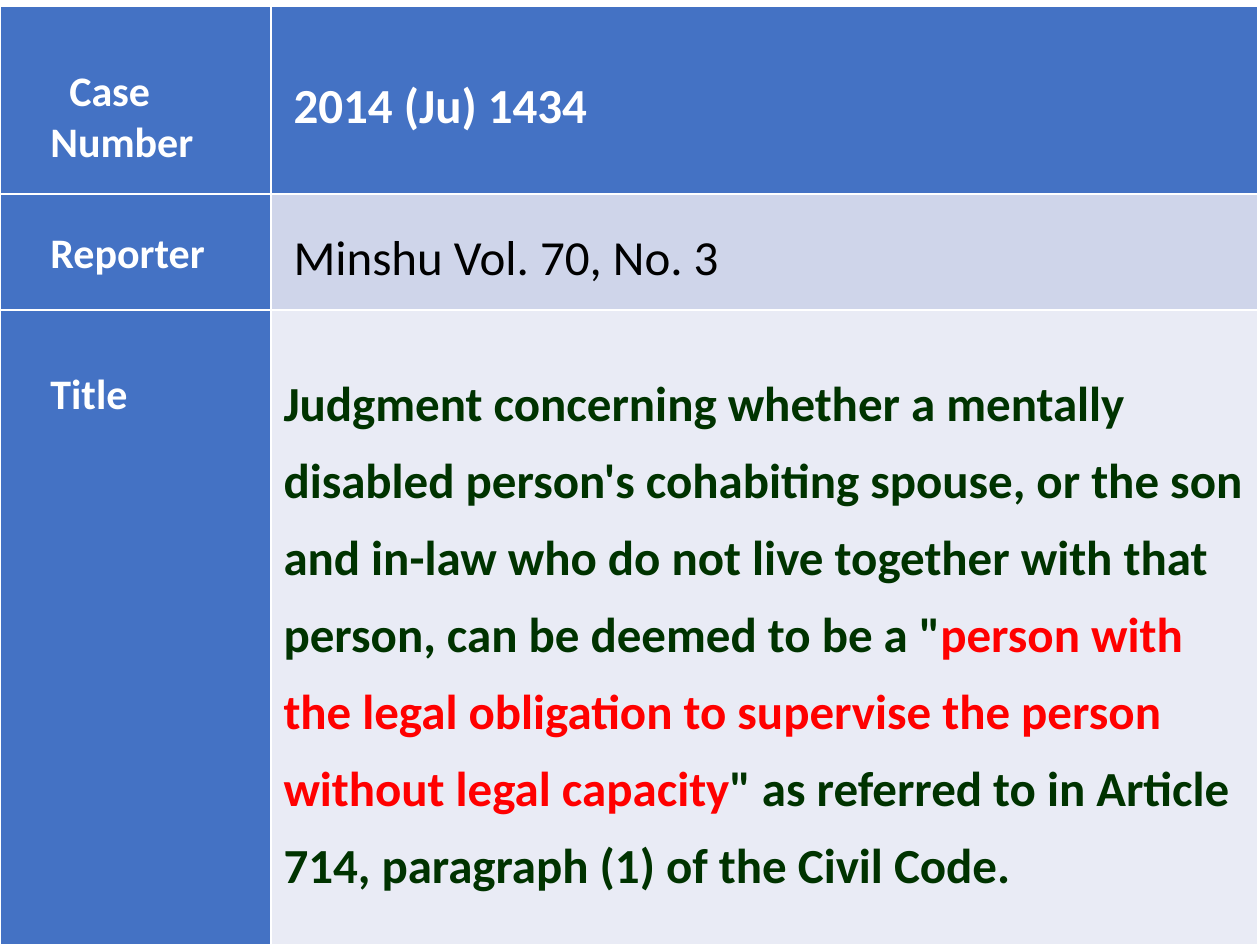
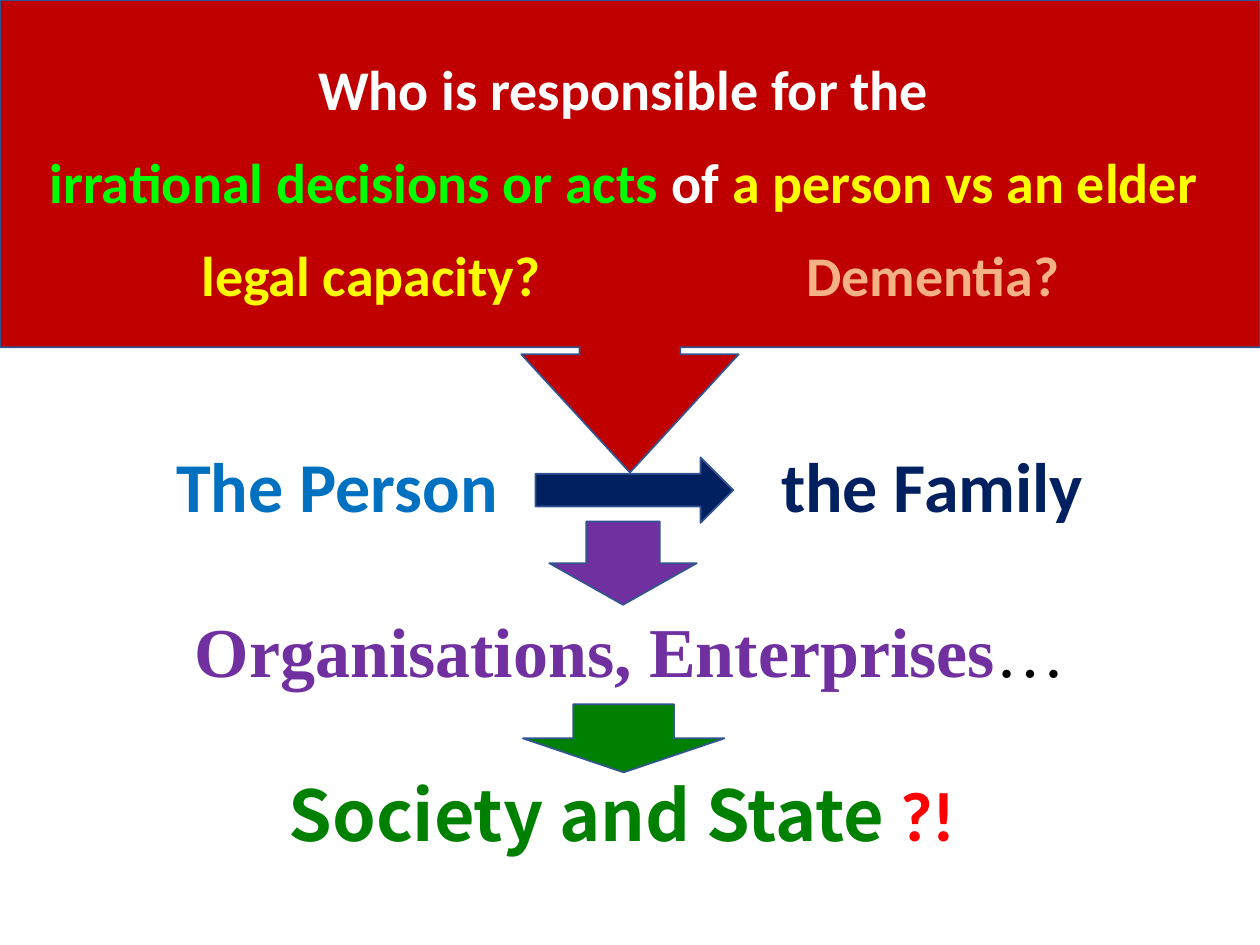
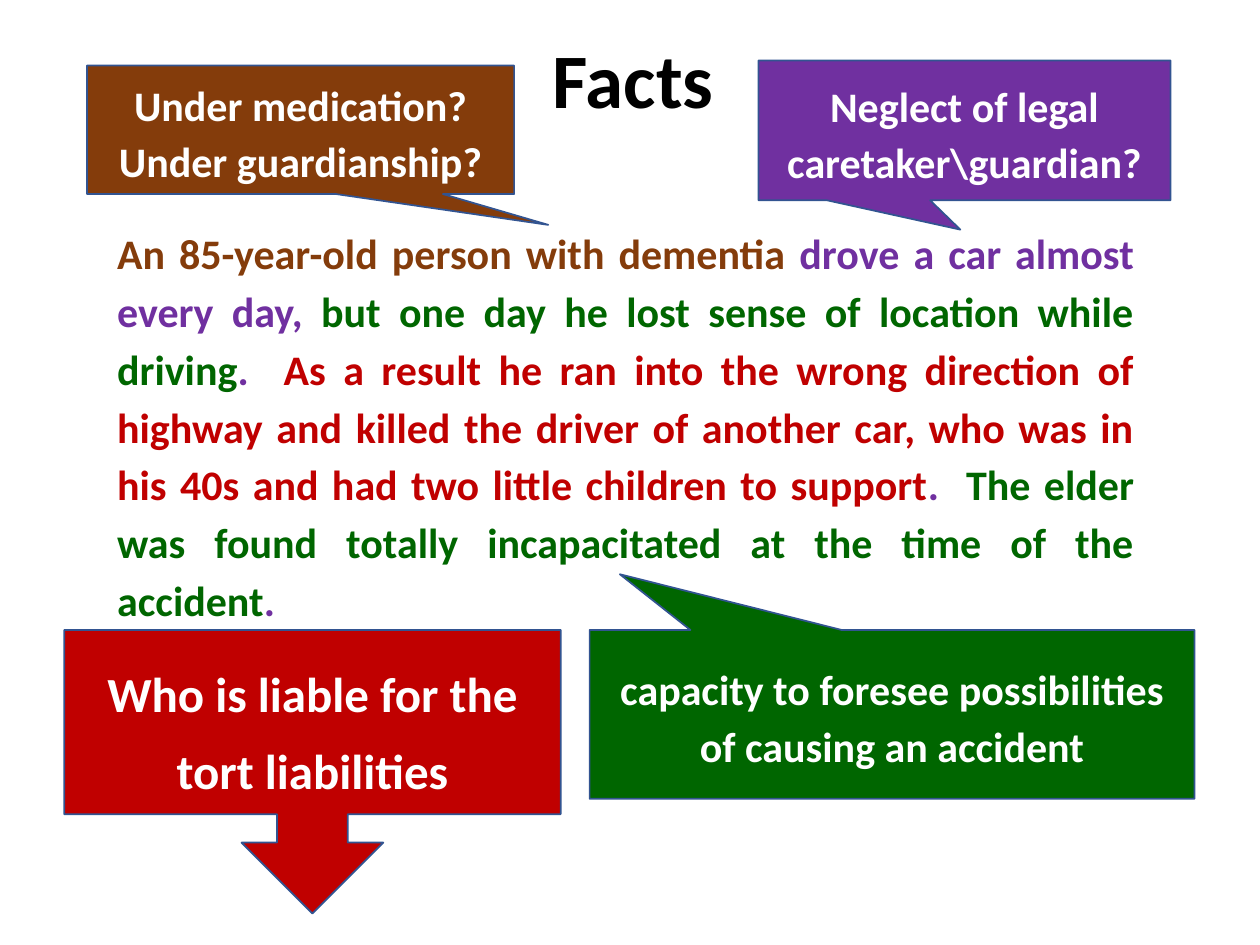
from lxml.etree import SubElement as Sub
from pptx import Presentation
from pptx.dml.color import RGBColor as Rgb
from pptx.enum.shapes import MSO_SHAPE as Kind
from pptx.enum.text import MSO_ANCHOR as Anchor, MSO_AUTO_SIZE as Auto, PP_ALIGN as Align
from pptx.oxml.ns import qn
from pptx.util import Inches, Pt

WHITE = Rgb(0xFF, 0xFF, 0xFF)
BLACK = Rgb(0x00, 0x00, 0x00)
BLUE = Rgb(0x44, 0x72, 0xC4)
MIST = Rgb(0xCF, 0xD5, 0xEA)
PALE = Rgb(0xE9, 0xEB, 0xF5)
EDGE = Rgb(0x32, 0x54, 0x91)
PINE = Rgb(0x00, 0x33, 0x00)
RED = Rgb(0xFF, 0x00, 0x00)
CRIMSON = Rgb(0xC0, 0x00, 0x00)
SKY = Rgb(0x00, 0x70, 0xC0)
NAVY = Rgb(0x00, 0x20, 0x60)
PURPLE = Rgb(0x70, 0x30, 0xA0)
GREEN = Rgb(0x00, 0x80, 0x00)
FOREST = Rgb(0x00, 0x66, 0x00)
LIME = Rgb(0x00, 0xFF, 0x00)
YELLOW = Rgb(0xFF, 0xFF, 0x00)
PEACH = Rgb(0xF4, 0xB1, 0x83)
BROWN = Rgb(0x84, 0x3C, 0x0B)

SANS = "Calibri"
SERIF = "Times New Roman"
NOTO = "Noto Sans CJK KR"


def write(par, runs, size, lead, align=Align.CENTER, before=0, tabs=()):
    if tabs:
        stops = Sub(par._p.get_or_add_pPr(), qn("a:tabLst"))
        for stop in tabs:
            Sub(stops, qn("a:tab"), pos=str(Inches(stop)), algn="l")
    par.alignment = align
    par.line_spacing = lead
    par.space_before = Pt(before)
    for text, color, *rest in runs:
        run = par.add_run()
        run.text = text
        font = run.font
        font.size = Pt(size)
        font.color.rgb = color
        font.name = rest[0] if rest else SANS
        font.bold = rest[1] if len(rest) > 1 else True


def place(shape, box):
    shape.left, shape.top, shape.width, shape.height = map(Inches, box)
    frame = shape.text_frame
    frame.word_wrap = True
    frame.auto_size = Auto.NONE
    return frame


def draw(slide, kind, box, fill, tweaks=()):
    shape = slide.shapes.add_shape(kind, *map(Inches, box))
    shape.shadow.inherit = False
    shape.fill.solid()
    shape.fill.fore_color.rgb = fill
    shape.line.color.rgb = EDGE
    shape.line.width = Pt(1)
    for spot, value in enumerate(tweaks):
        shape.adjustments[spot] = value
    frame = shape.text_frame
    frame.word_wrap = True
    frame.vertical_anchor = Anchor.MIDDLE
    return frame


def case_slide(deck, box):
    slide = deck.slides.add_slide(deck.slide_layouts[6])
    table = slide.shapes.add_table(3, 2, *map(Inches, box)).table
    table.first_col = True
    label = 2.15
    for col, width in zip(table.columns, (label, box[2] - label)):
        col.width = Inches(width)
    title = [
        ("Judgment concerning whether a mentally disabled person's cohabiting spouse, "
         "or the son and in-law who do not live together with that person, "
         "can be deemed to be a \"", PINE),
        ("person with the legal obligation to supervise the person "
         "without legal capacity", RED),
        ("\" as referred to in Article 714, paragraph (1) of the Civil Code.", PINE)]
    rows = [
        (1.49, ("Case", "Number"), 2, [("2014 (Ju) 1434", WHITE)], BLUE, 42, 0.18),
        (0.92, ("Reporter",), 1.5, [("Minshu Vol. 70, No. 3", BLACK, SANS, False)],
         MIST, 42, 0.18),
        (5.04, ("Title",), 2, title, PALE, 44, 0.1)]
    for row, (height, words, lead, runs, fill, pitch, inset) in zip(table.rows, rows):
        row.height = Inches(height)
        head, main = row.cells
        for cell, color, left in ((head, BLUE, 0.4), (main, fill, inset)):
            cell.fill.solid()
            cell.fill.fore_color.rgb = color
            cell.margin_left = Inches(left)
            cell.margin_top = cell.margin_bottom = Inches(0.07)
        frame = head.text_frame
        write(frame.paragraphs[0], [(words[0], WHITE)], 24, lead, Align.LEFT)
        for word in words[1:]:
            frame.paragraphs[0]._p.get_or_add_pPr().set("marL", str(Inches(0.15)))
            write(frame.add_paragraph(), [(word, WHITE)], 24, 1.0, Align.LEFT)
        main.vertical_anchor = Anchor.MIDDLE
        write(main.text_frame.paragraphs[0], runs, 28, Pt(pitch), Align.LEFT)


def chain(slide, box):
    frame = place(slide.shapes.title, box)
    frame.vertical_anchor = Anchor.MIDDLE
    frame.margin_left = frame.margin_right = Inches(0.68)
    pitch = 47
    write(frame.paragraphs[0], [("The Person\t", SKY), ("the Family", NAVY)],
          40, Pt(pitch), Align.LEFT, tabs=(4.8,))
    for runs in (
            [("Organisations, Enterprises", PURPLE, SERIF), ("…", BLACK, SERIF, False)],
            [("Society and State ", GREEN, NOTO), ("?! ", RED)]):
        write(frame.add_paragraph(), runs, 40, Pt(pitch), before=pitch)


def banner(slide, box):
    frame = draw(slide, Kind.DOWN_ARROW_CALLOUT, box, CRIMSON, (0.213, 0.23, 0.25, 0.735))
    lead = Pt(47)
    write(frame.paragraphs[0], [("Who is responsible for the ", WHITE)], 32, lead)
    write(frame.add_paragraph(),
          [("irrational decisions or acts ", LIME), ("of ", WHITE),
           ("a person vs an elder ", YELLOW)], 32, lead, before=6)
    write(frame.add_paragraph(), [("\tlegal capacity?\t", YELLOW), ("Dementia?", PEACH)],
          32, lead, Align.LEFT, 6, (1.5, 6.3))


def blame_slide(deck):
    slide = deck.slides.add_slide(deck.slide_layouts[5])
    chain(slide, (0.72, 2.8, 8.56, 4.72))
    banner(slide, (0, 0, 10, 3.75))
    for kind, box, fill in (
            (Kind.RIGHT_ARROW, (4.25, 3.63, 1.57, 0.52), NAVY),
            (Kind.DOWN_ARROW, (4.36, 4.14, 1.17, 0.66), PURPLE),
            (Kind.DOWN_ARROW, (4.15, 5.59, 1.6, 0.54), GREEN)):
        draw(slide, kind, box, fill)


def story(slide, box):
    frame = place(slide.placeholders[1], box)
    par = frame.paragraphs[0]
    props = par._p.get_or_add_pPr()
    props.set("marL", "0")
    props.set("indent", "0")
    Sub(props, qn("a:buNone"))
    write(par, [
        ("An 85-year-old person with dementia ", BROWN),
        ("drove a car almost every day, ", PURPLE),
        ("but one day he lost sense of location while driving", FOREST),
        (".  ", PURPLE),
        ("As a result he ran into the wrong direction of highway and killed the driver "
         "of another car, who was in his 40s and had two little children to support",
         CRIMSON),
        (".  ", PURPLE),
        ("The elder was found totally incapacitated at the time of the accident", FOREST),
        (". ", PURPLE)], 24, Pt(33), Align.JUSTIFY)


def facts_slide(deck):
    slide = deck.slides.add_slide(deck.slide_layouts[1])
    frame = place(slide.shapes.title, (0.83, 0.19, 8.39, 0.94))
    frame.vertical_anchor = Anchor.MIDDLE
    write(frame.paragraphs[0], [("Facts", BLACK)], 44, 0.9)
    story(slide, (0.83, 1.7, 8.27, 5.23))
    wedge = Kind.RECTANGULAR_CALLOUT
    for kind, box, fill, tweaks, text, size, lead in (
            (wedge, (6.02, 0.48, 3.27, 1.11), PURPLE, (-0.01, 0.71),
             "Neglect of legal caretaker\\guardian?", 24, 32),
            (wedge, (0.69, 0.52, 3.39, 1.02), BROWN, (0.58, 0.74),
             "Under medication? Under guardianship?", 24, 32),
            (wedge, (4.68, 5, 4.8, 1.34), FOREST, (-0.45, -0.83),
             "capacity to foresee possibilities of causing an accident", 24, 32),
            (Kind.DOWN_ARROW_CALLOUT, (0.51, 5, 3.94, 2.25), CRIMSON, (),
             "Who is liable for the tort liabilities", 28, 44)):
        frame = draw(slide, kind, box, fill, tweaks)
        write(frame.paragraphs[0], [(text, WHITE)], size, Pt(lead))


def main():
    deck = Presentation()
    deck.slide_width, deck.slide_height = Inches(10), Inches(7.5)
    case_slide(deck, (0, 0.05, 9.98, 7.45))
    blame_slide(deck)
    facts_slide(deck)
    deck.save("out.pptx")


if __name__ == "__main__":
    main()
